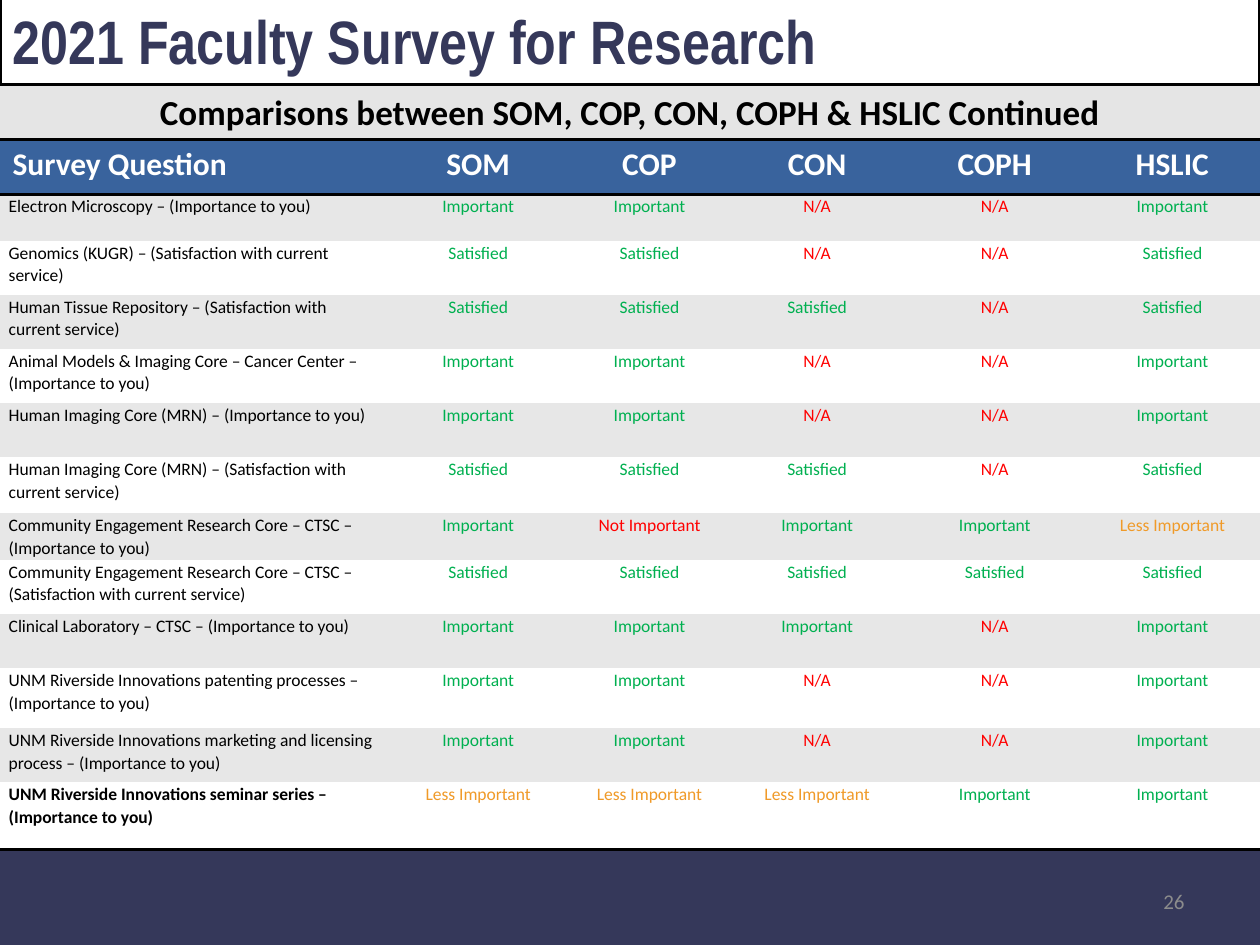
from lxml import etree
from pptx import Presentation
from pptx.dml.color import RGBColor
from pptx.enum import shapes, text
from pptx.oxml.ns import qn
from pptx.util import Pt

NAVY, BLUE, BLACK, WHITE = "35385A", "39639D", "000000", "FFFFFF"
STRIPE = "E7E7E7"
GREEN, RED, AMBER = "00B050", "FF0000", "F09A28"
LEFT, MID, RIGHT = (text.PP_ALIGN.LEFT, text.PP_ALIGN.CENTER,
                    text.PP_ALIGN.RIGHT)
PLAIN = "{2D5ABB26-0587-4C30-8999-92F81FD0307C}"  # no style, no grid

WIDTHS = [220.32, 105.84, 90, 101.52, 101.52, 101.52]
HEADS = ["Survey Question", "SOM", "COP", "CON", "COPH", "HSLIC"]
HEAD_H = 31.5
RATINGS = {
    "I": ("Important", GREEN),
    "S": ("Satisfied", GREEN),
    "L": ("Less Important", AMBER),
    "X": ("Not Important", RED),
    "N": ("N/A", RED),
}
# question, one rating code per college, row height
ROWS = [
    ("Electron Microscopy – (Importance to you)", "IINNI", 26.8),
    ("Genomics (KUGR) – (Satisfaction with current service)", "SSNNS", 30.9),
    ("Human Tissue Repository – (Satisfaction with current service)",
     "SSSNS", 30.9),
    ("Animal Models & Imaging Core – Cancer Center – (Importance to you)",
     "IINNI", 30.9),
    ("Human Imaging Core (MRN) – (Importance to you)", "IINNI", 30.9),
    ("Human Imaging Core (MRN) – (Satisfaction with current service)",
     "SSSNS", 32),
    ("Community Engagement Research Core – CTSC – (Importance to you)",
     "IXIIL", 26.8),
    ("Community Engagement Research Core – CTSC – "
     "(Satisfaction with current service)", "SSSSS", 30.9),
    ("Clinical Laboratory – CTSC – (Importance to you)", "IIINI", 30.9),
    ("UNM Riverside Innovations patenting processes – (Importance to you)",
     "IINNI", 34.3),
    ("UNM Riverside Innovations marketing and licensing process – "
     "(Importance to you)", "IINNI", 30.9),
    ("UNM Riverside Innovations seminar series – (Importance to you)",
     "LLLII", 38.3),
]


def color(code):
    return RGBColor.from_string(code)


def write(frame, words, size, tint, bold=False, align=LEFT, face="Calibri"):
    frame.word_wrap = True
    para = frame.paragraphs[0]
    para.text = words
    para.alignment = align
    font = para.font
    font.name, font.size, font.bold = face, Pt(size), bold
    font.color.rgb = color(tint)
    return para


def band(slide, box, fill, line):
    shape = slide.shapes.add_shape(shapes.MSO_SHAPE.RECTANGLE, *map(Pt, box))
    shape.shadow.inherit = False
    shape.fill.solid()
    shape.fill.fore_color.rgb = color(fill)
    shape.line.color.rgb = color(line)
    shape.line.width = Pt(2)
    return shape


def label(slide, box, *args, **kwargs):
    frame = slide.shapes.add_textbox(*map(Pt, box)).text_frame
    write(frame, *args, **kwargs)
    return frame


def title(slide, box):
    frame = band(slide, box, WHITE, BLACK).text_frame
    frame.vertical_anchor = text.MSO_ANCHOR.TOP
    write(frame, "2021 Faculty Survey for Research", 35, NAVY, True,
          face="Arial Narrow")


def paint(cell, fill, sides):
    """Fill a cell and rule the given sides (T, B) in black."""
    props = cell._tc.get_or_add_tcPr()
    for side in sides:
        line = etree.SubElement(props, qn("a:ln" + side), w=str(Pt(2)))
        solid = etree.SubElement(line, qn("a:solidFill"))
        etree.SubElement(solid, qn("a:srgbClr"), val=BLACK)
    cell.fill.solid()
    cell.fill.fore_color.rgb = color(fill)


def entry(cell, words, tint, bold, align):
    cell.margin_left = cell.margin_right = Pt(5)
    cell.margin_top = cell.margin_bottom = 0
    write(cell.text_frame, words, 10, tint, bold, align).line_spacing = 1.07


def survey(slide, left, top):
    high = HEAD_H + sum(row[2] for row in ROWS)
    table = slide.shapes.add_table(
        len(ROWS) + 1, len(HEADS), Pt(left), Pt(top),
        Pt(sum(WIDTHS)), Pt(high)).table
    table.first_row = table.horz_banding = False
    table._tbl.tblPr.find(qn("a:tableStyleId")).text = PLAIN
    for col, width in zip(table.columns, WIDTHS):
        col.width = Pt(width)

    table.rows[0].height = Pt(HEAD_H)
    for c, head in enumerate(HEADS):
        cell = table.cell(0, c)
        paint(cell, BLUE, "TB")
        write(cell.text_frame, head, 18, WHITE, True, MID if c else LEFT)

    for r, (ask, codes, height) in enumerate(ROWS, 1):
        last = r == len(ROWS)
        table.rows[r].height = Pt(height)
        for c in range(len(HEADS)):
            cell = table.cell(r, c)
            paint(cell, STRIPE if r % 2 else WHITE, "B" if last else "")
            if c:
                entry(cell, *RATINGS[codes[c - 1]], False, MID)
            else:
                entry(cell, ask, BLACK, last, LEFT)


def footer(slide, box):
    left, top, width, height = box
    band(slide, box, NAVY, NAVY)
    frame = label(slide, (left + width - 204, top + 15, 168, 28.8),
                  "26", 12, "8C8C8C", align=RIGHT)
    frame.vertical_anchor = text.MSO_ANCHOR.MIDDLE


def main():
    deck = Presentation()
    deck.slide_width, deck.slide_height = Pt(720), Pt(540)
    slide = deck.slides.add_slide(deck.slide_layouts[6])
    slide.background.fill.solid()
    slide.background.fill.fore_color.rgb = color("E5E5E5")
    footer(slide, (0, 485.3, 720, 56.2))
    title(slide, (0, -1.5, 720, 49.7))
    label(slide, (48, 48.2, 624, 31.5),
          "Comparisons between SOM, COP, CON, COPH & HSLIC Continued",
          20, BLACK, True, MID)
    survey(slide, 0, 79.5)
    deck.save("out.pptx")


if __name__ == "__main__":
    main()
